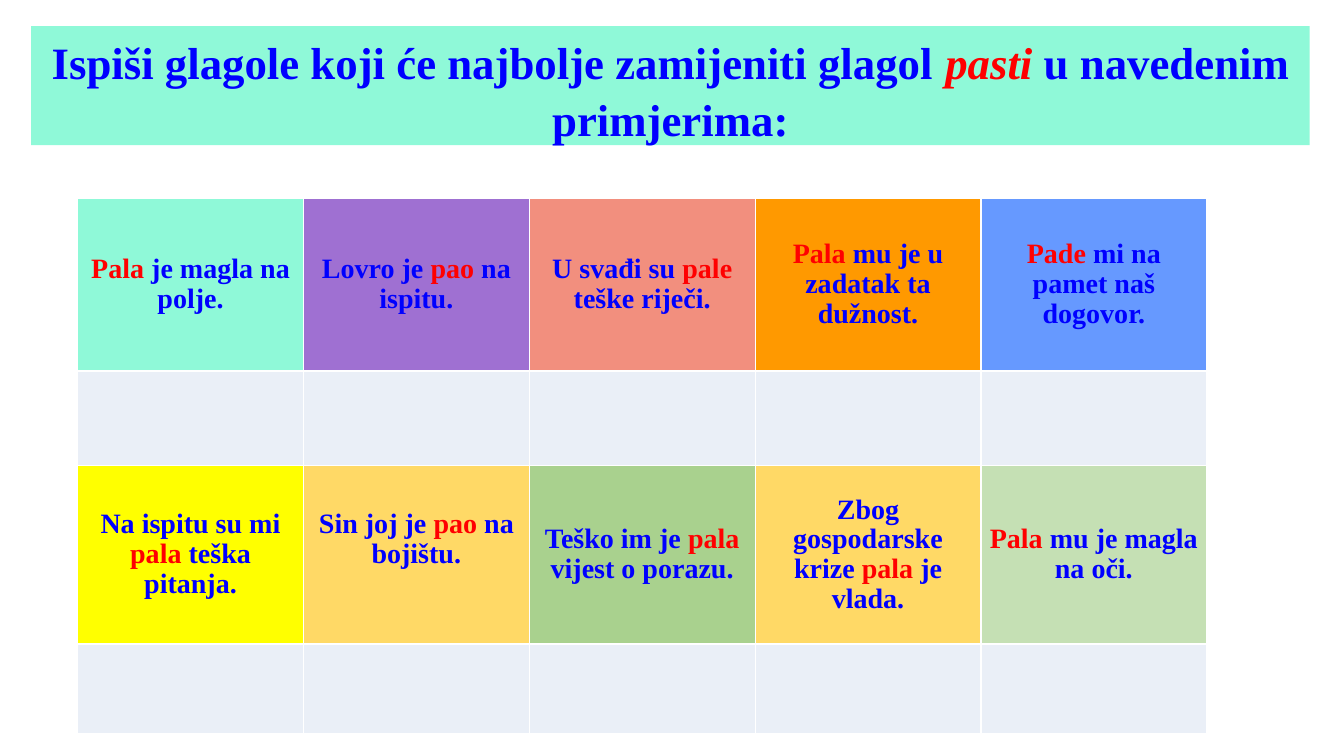
import pptx
import pptx.util
import pptx.dml.color
import pptx.enum.shapes
import pptx.enum.text

Inches, Pt = pptx.util.Inches, pptx.util.Pt
RGB = pptx.dml.color.RGBColor

BLUE, RED = RGB(0x00, 0x00, 0xFF), RGB(0xFF, 0x00, 0x00)
MINT, PALE = RGB(0x8F, 0xF9, 0xD8), RGB(0xEA, 0xEF, 0xF7)
VIOLET, CORAL = RGB(0x9F, 0x70, 0xD2), RGB(0xF2, 0x8F, 0x7E)
ORANGE, SKY = RGB(0xFF, 0x99, 0x00), RGB(0x66, 0x99, 0xFF)
YELLOW, GOLD = RGB(0xFF, 0xFF, 0x00), RGB(0xFF, 0xD9, 0x66)
GREEN, LIGHT_GREEN = RGB(0xA9, 0xD1, 0x8E), RGB(0xC5, 0xE0, 0xB4)

TITLE = "Ispiši glagole koji će najbolje zamijeniti glagol |pasti| u navedenim primjerima:"
SENTENCES = [
    [("|Pala| je magla na polje.", MINT),
     ("Lovro je |pao| na ispitu.", VIOLET),
     ("U svađi su |pale| teške riječi.", CORAL),
     ("|Pala| mu je u zadatak ta dužnost.", ORANGE),
     ("|Pade| mi na pamet naš dogovor.", SKY)],
    [("Na ispitu su mi |pala| teška pitanja.", YELLOW),
     ("Sin joj je |pao| na bojištu.", GOLD),
     ("Teško im je |pala| vijest o porazu.", GREEN),
     ("Zbog gospodarske krize |pala| je vlada.", GOLD),
     ("|Pala| mu je magla na oči.", LIGHT_GREEN)],
]
RAISED = (1, 1)
COL_WIDTH = 2.24
ROW_HEIGHTS = [1.71, 0.94, 1.77, 0.89]


def write(tf, text, size, spacing, italic=False):
    p = tf.paragraphs[0]
    p.alignment = pptx.enum.text.PP_ALIGN.CENTER
    p.line_spacing = spacing
    p.font.name, p.font.size, p.font.bold = "Times New Roman", Pt(size), True
    for i, part in enumerate(text.split("|")):
        if part:
            r = p.add_run()
            r.text = part
            r.font.color.rgb = RED if i % 2 else BLUE
            if italic and i % 2:
                r.font.italic = True


def add_sentences(s):
    cols = len(SENTENCES[0])
    table = s.shapes.add_table(
        len(ROW_HEIGHTS), cols, Inches(0.77), Inches(1.97),
        Inches(COL_WIDTH * cols), Inches(sum(ROW_HEIGHTS))).table
    table.first_row = table.horz_banding = False
    for col in table.columns:
        col.width = Inches(COL_WIDTH)
    for row, height in zip(table.rows, ROW_HEIGHTS):
        row.height = Inches(height)
    for i, line in enumerate(SENTENCES):
        for j, (text, color) in enumerate(line):
            cell, answer = table.cell(2 * i, j), table.cell(2 * i + 1, j)
            for c, fill in ((cell, color), (answer, PALE)):
                c.fill.solid()
                c.fill.fore_color.rgb = fill
            cell.margin_left = cell.margin_right = Inches(0.07)
            cell.margin_top = 0
            cell.margin_bottom = Inches(0.31 if (i, j) == RAISED else 0)
            cell.vertical_anchor = pptx.enum.text.MSO_ANCHOR.MIDDLE
            write(cell.text_frame, text, 20, 0.96)


def add_title(s):
    sp = s.shapes.add_shape(pptx.enum.shapes.MSO_SHAPE.RECTANGLE,
                            Inches(0.31), Inches(0.26), Inches(12.68), Inches(1.18))
    sp.shadow.inherit = False
    sp.fill.solid()
    sp.fill.fore_color.rgb = MINT
    sp.line.fill.background()
    tf = sp.text_frame
    tf.word_wrap = True
    tf.vertical_anchor = pptx.enum.text.MSO_ANCHOR.TOP
    write(tf, TITLE, 32, 1.06, italic=True)


def main():
    prs = pptx.Presentation()
    prs.slide_width, prs.slide_height = Inches(13.33), Inches(7.5)
    s = prs.slides.add_slide(prs.slide_layouts[6])
    add_sentences(s)
    add_title(s)
    prs.save("out.pptx")


if __name__ == "__main__":
    main()
